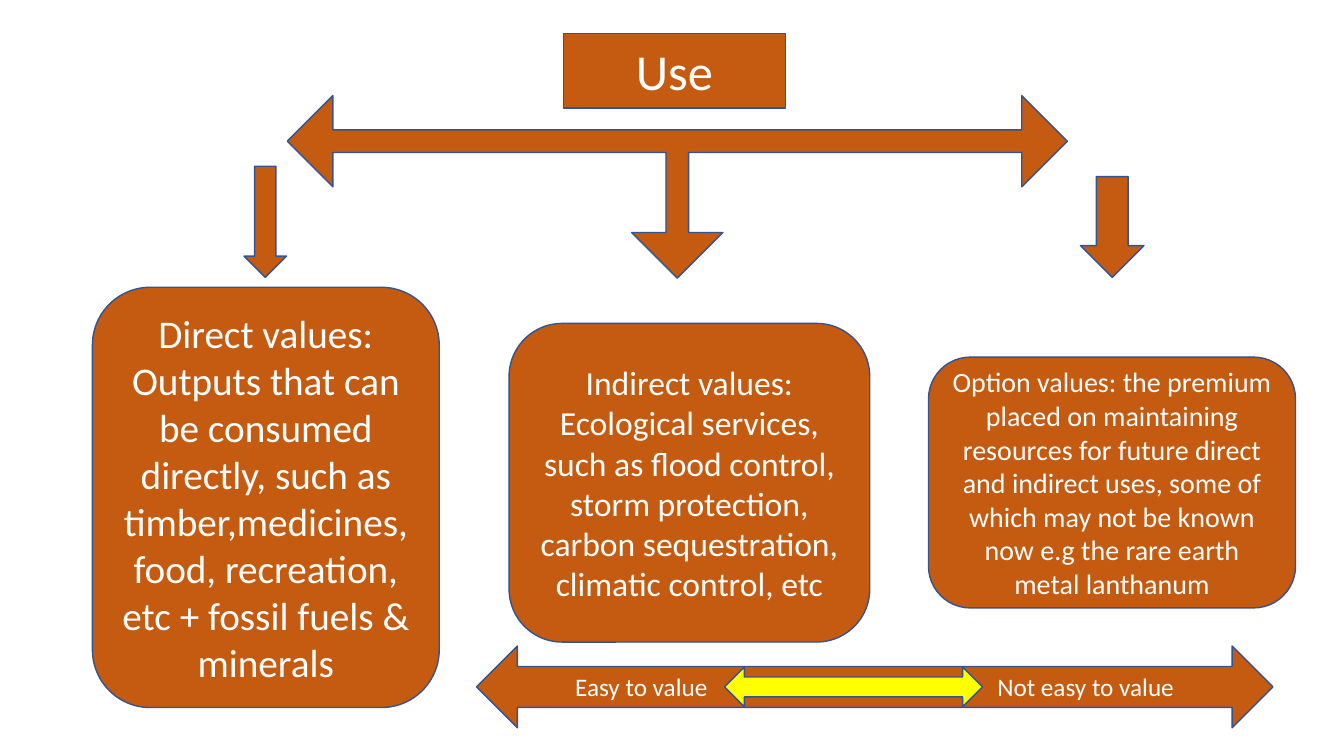
from dataclasses import dataclass

from lxml import etree
from pptx import Presentation
from pptx import util as u
from pptx.dml.color import RGBColor
from pptx.enum import shapes, text
from pptx.oxml.ns import qn

KIND = shapes.MSO_SHAPE


@dataclass(frozen=True)
class Theme:
    font: str = "Calibri"
    box: str = "C55A11"
    highlight: str = "FFFF00"
    outline: str = "325491"
    ink: str = "FFFFFF"
    heading: int = 36
    large: int = 28
    medium: int = 24
    small: int = 20
    scale: int = 18


THEME = Theme()


def paint(shape, fill):
    shape.fill.solid()
    shape.fill.fore_color.rgb = RGBColor.from_string(fill)
    shape.line.color.rgb = RGBColor.from_string(THEME.outline)
    shape.line.width = u.Pt(1)


def place(shape, left, top, width, height):
    shape.left, shape.top = u.Cm(left), u.Cm(top)
    shape.width, shape.height = u.Cm(width), u.Cm(height)


def write(shape, *lines, size, align=text.PP_ALIGN.CENTER, tab=None):
    """Fill a shape with one paragraph per line; tab is a stop in cm."""
    frame = shape.text_frame
    frame.word_wrap = True
    frame.auto_size = text.MSO_AUTO_SIZE.NONE
    frame.vertical_anchor = text.MSO_ANCHOR.MIDDLE
    for index, line in enumerate(lines):
        paragraph = frame.add_paragraph() if index else frame.paragraphs[0]
        paragraph.alignment = align
        paragraph.line_spacing = 1.0
        if tab:
            stops = etree.SubElement(paragraph._p.get_or_add_pPr(), qn("a:tabLst"))
            etree.SubElement(stops, qn("a:tab"), pos=str(u.Cm(tab)), algn="l")
        run = paragraph.add_run()
        run.text = line
        run.font.name = THEME.font
        run.font.size = u.Pt(size)
        run.font.color.rgb = RGBColor.from_string(THEME.ink)


def add_figure(slide, kind, left, top, width, height, fill=THEME.box):
    figure = slide.shapes.add_shape(
        kind, u.Cm(left), u.Cm(top), u.Cm(width), u.Cm(height))
    figure.shadow.inherit = False
    paint(figure, fill)
    return figure


def add_heading(slide, wording):
    """Turn the title placeholder into a rounded box."""
    heading = slide.shapes.title
    place(heading, 14.2, 0.84, 5.59, 1.88)
    outline = etree.Element(qn("a:prstGeom"), prst="roundRect")
    etree.SubElement(outline, qn("a:avLst"))
    heading._element.spPr.find(qn("a:xfrm")).addnext(outline)
    paint(heading, THEME.box)
    write(heading, wording, size=THEME.heading)


def add_branches(slide):
    fork = add_figure(slide, KIND.LEFT_RIGHT_UP_ARROW, 7.24, 2.41, 19.66, 4.6)
    fork.adjustments[0] = 0.124
    fork._element.spPr.find(qn("a:xfrm")).set("flipV", "1")
    add_figure(slide, KIND.DOWN_ARROW, 6.15, 4.19, 1.07, 2.8)
    add_figure(slide, KIND.DOWN_ARROW, 27.23, 4.45, 1.6, 2.54)


def add_value_boxes(slide):
    values = [
        ((2.33, 7.24, 8.74, 10.59), THEME.large,
         ["Direct values:",
          "Outputs that can be consumed directly, such as timber,medicines, "
          "food, recreation, etc + fossil fuels & minerals"]),
        ((12.83, 8.15, 9.09, 8.03), THEME.medium,
         ["Indirect values:",
          "Ecological services, such as flood control, storm protection, "
          "carbon sequestration, climatic control, etc"]),
        ((23.4, 9.0, 9.25, 6.32), THEME.small,
         ["Option values: the premium placed on maintaining resources for "
          "future direct and indirect uses, some of which may not be known "
          "now e.g the rare earth metal lanthanum"]),
    ]
    for position, size, lines in values:
        box = add_figure(slide, KIND.ROUNDED_RECTANGLE, *position)
        write(box, *lines, size=size)


def add_ease_scale(slide):
    scale = add_figure(slide, KIND.LEFT_RIGHT_ARROW, 12.01, 16.28, 20.07, 2.06)
    scale.text_frame.margin_left = u.Cm(1.97)
    write(scale, "Easy to value\tNot easy to value", size=THEME.scale,
          align=text.PP_ALIGN.LEFT, tab=10.64)
    add_figure(slide, KIND.LEFT_RIGHT_ARROW, 18.26, 16.81, 6.5, 1.0,
               fill=THEME.highlight)


def main():
    deck = Presentation()
    deck.slide_width, deck.slide_height = u.Cm(33.87), u.Cm(19.05)
    title_only = deck.slide_layouts[5]
    slide = deck.slides.add_slide(title_only)
    add_heading(slide, "Use")
    add_branches(slide)
    add_value_boxes(slide)
    add_ease_scale(slide)
    deck.save("out.pptx")


if __name__ == "__main__":
    main()
